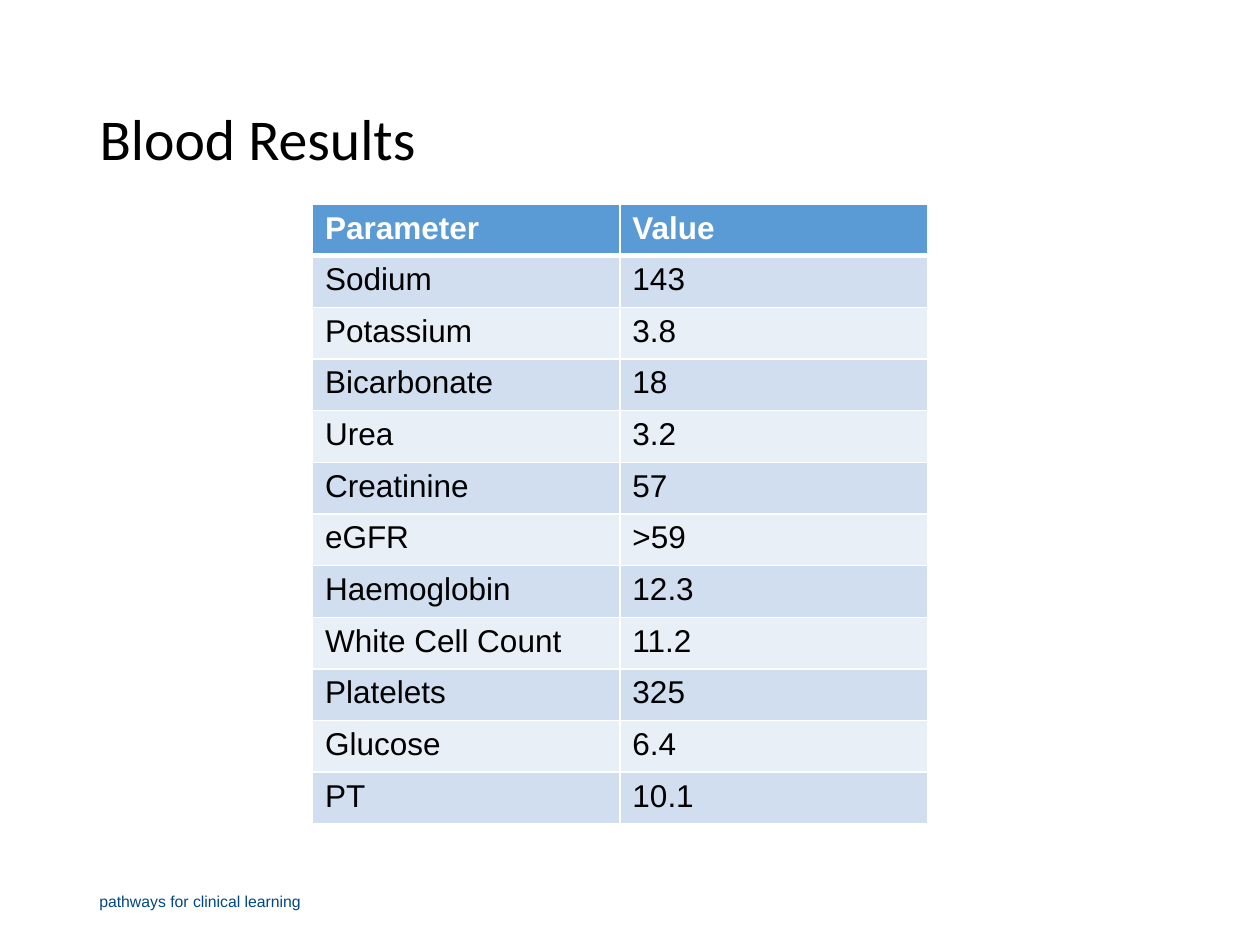
from typing import NamedTuple

from lxml import etree
from pptx import Presentation
from pptx.dml.color import RGBColor
from pptx.enum.text import MSO_ANCHOR, PP_ALIGN
from pptx.oxml.ns import qn
from pptx.util import Inches, Pt

LEFT = PP_ALIGN.LEFT
MIDDLE = MSO_ANCHOR.MIDDLE
TITLE_ONLY_LAYOUT = 5

WHITE, BLACK, NAVY = "FFFFFF", "000000", "014785"
HEADER_FILL = "5B9BD5"
BAND_FILLS = ("D0DEEF", "E9EFF7")
COLUMN_WIDTH = 2.44
ROW_HEIGHT = 0.41


class BloodResult(NamedTuple):
    parameter: str
    value: str


HEADER = BloodResult("Parameter", "Value")
RESULTS = [
    BloodResult("Sodium", "143"),
    BloodResult("Potassium", "3.8"),
    BloodResult("Bicarbonate", "18"),
    BloodResult("Urea", "3.2"),
    BloodResult("Creatinine", "57"),
    BloodResult("eGFR", ">59"),
    BloodResult("Haemoglobin", "12.3"),
    BloodResult("White Cell Count", "11.2"),
    BloodResult("Platelets", "325"),
    BloodResult("Glucose", "6.4"),
    BloodResult("PT", "10.1"),
]


def color(hex_value: str) -> RGBColor:
    return RGBColor.from_string(hex_value)


def write_text(text_frame, text: str, *, size: float, font: str = "Arial",
               fill: str = BLACK, bold: bool = False, line_spacing=None) -> None:
    paragraph = text_frame.paragraphs[0]
    paragraph.alignment = LEFT
    if line_spacing is not None:
        paragraph.line_spacing = line_spacing
    run = paragraph.add_run()
    run.text = text
    run.font.name = font
    run.font.size = Pt(size)
    run.font.bold = bold
    run.font.color.rgb = color(fill)


def set_borders(cell, widths: dict[str, float]) -> None:
    """Draw white cell borders; widths are in points, by side L, R, T, B."""
    properties = cell._tc.get_or_add_tcPr()
    for side, width in widths.items():
        line = etree.SubElement(properties, qn(f"a:ln{side}"), w=str(Pt(width)))
        fill = etree.SubElement(line, qn("a:solidFill"))
        etree.SubElement(fill, qn("a:srgbClr"), val=WHITE)


def draw_row(table, row_index: int, result: BloodResult) -> None:
    is_header = row_index == 0
    fill = HEADER_FILL if is_header else BAND_FILLS[(row_index - 1) % 2]
    widths = {"L": 1, "R": 1,
              "T": 3 if row_index == 1 else 1,
              "B": 3 if is_header else 1}
    table.rows[row_index].height = Inches(ROW_HEIGHT)
    for column_index, text in enumerate(result):
        cell = table.cell(row_index, column_index)
        set_borders(cell, widths)
        cell.fill.solid()
        cell.fill.fore_color.rgb = color(fill)
        write_text(cell.text_frame, text, size=18, bold=is_header,
                   fill=WHITE if is_header else BLACK)


def main() -> None:
    presentation = Presentation()
    presentation.slide_width = Inches(10)
    presentation.slide_height = Inches(7.5)
    slide = presentation.slides.add_slide(
        presentation.slide_layouts[TITLE_ONLY_LAYOUT])

    # Title
    title = slide.shapes.title
    title.left, title.top = Inches(0.69), Inches(0.4)
    title.width, title.height = Inches(8.62), Inches(1.45)
    title.text_frame.vertical_anchor = MIDDLE
    write_text(title.text_frame, "Blood Results", size=33, font="Calibri",
               line_spacing=0.9)

    # Results table
    rows = [HEADER, *RESULTS]
    table = slide.shapes.add_table(
        len(rows), len(HEADER), Inches(2.48), Inches(1.62),
        Inches(COLUMN_WIDTH * len(HEADER)), Inches(ROW_HEIGHT * len(rows))).table
    for column in table.columns:
        column.width = Inches(COLUMN_WIDTH)
    for row_index, result in enumerate(rows):
        draw_row(table, row_index, result)

    # Footer
    footer = slide.shapes.add_textbox(
        Inches(0.69), Inches(6.95), Inches(2.25), Inches(0.4))
    footer.text_frame.word_wrap = True
    footer.text_frame.vertical_anchor = MIDDLE
    write_text(footer.text_frame, "pathways for clinical learning", size=9,
               fill=NAVY)

    presentation.save("out.pptx")


if __name__ == "__main__":
    main()
